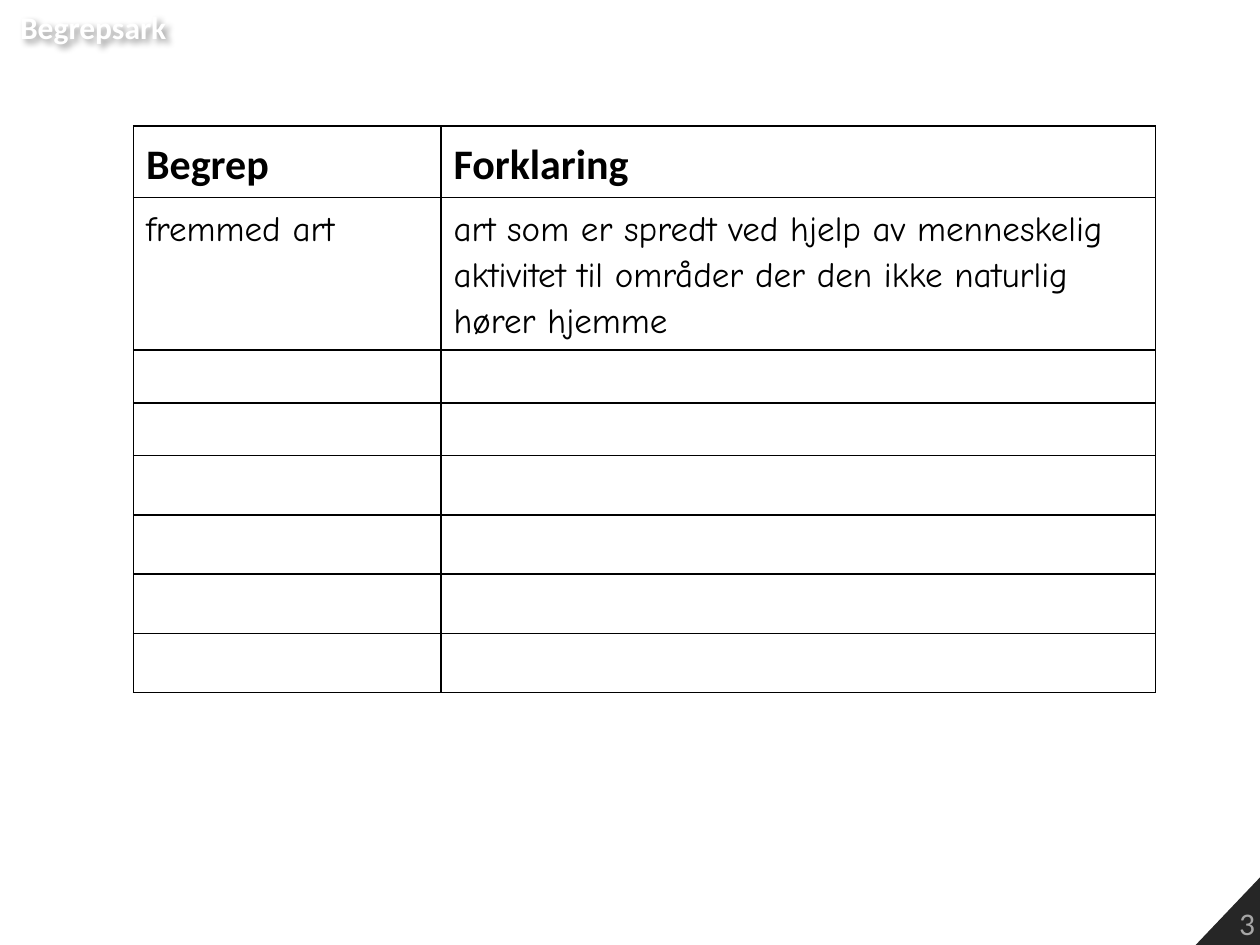
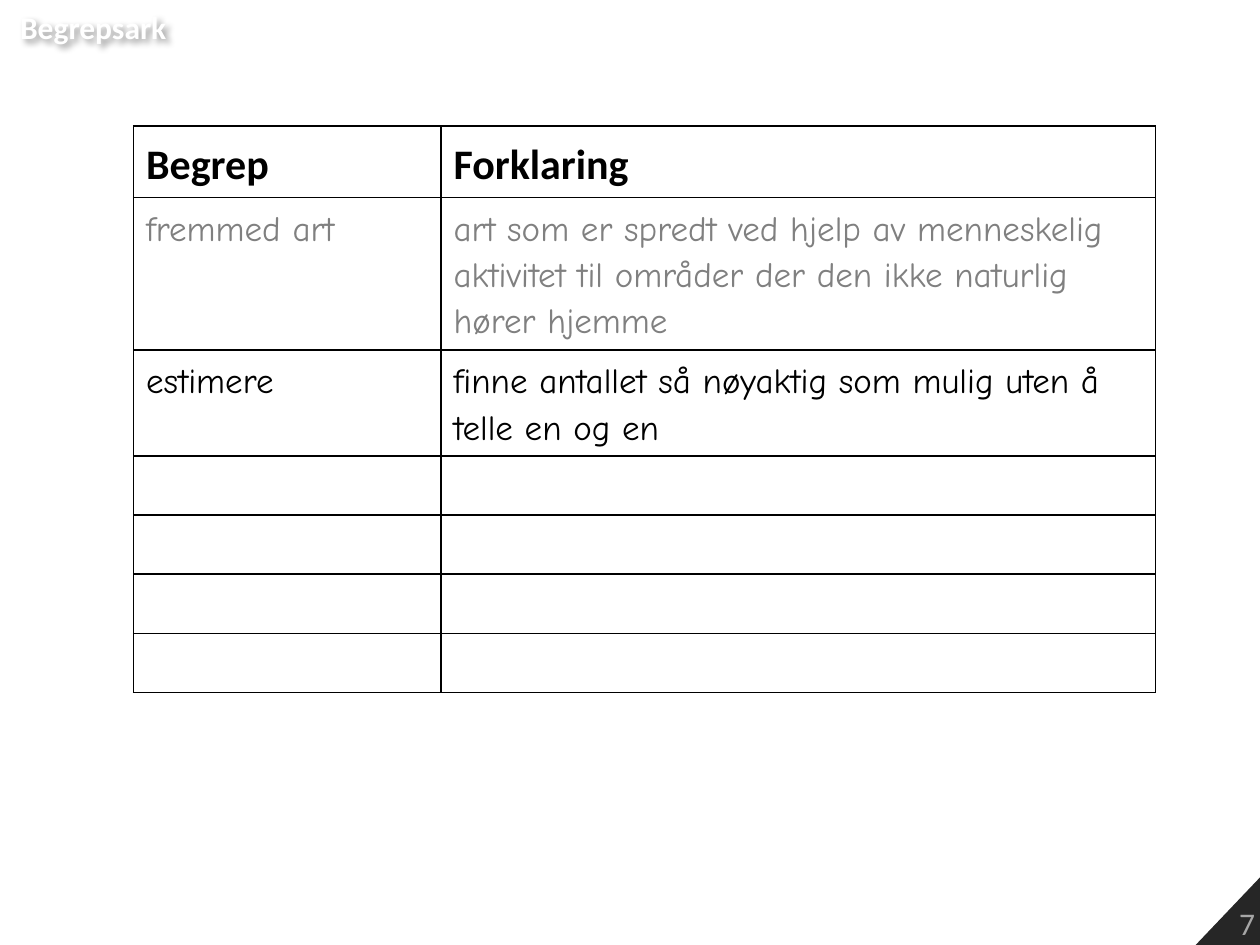
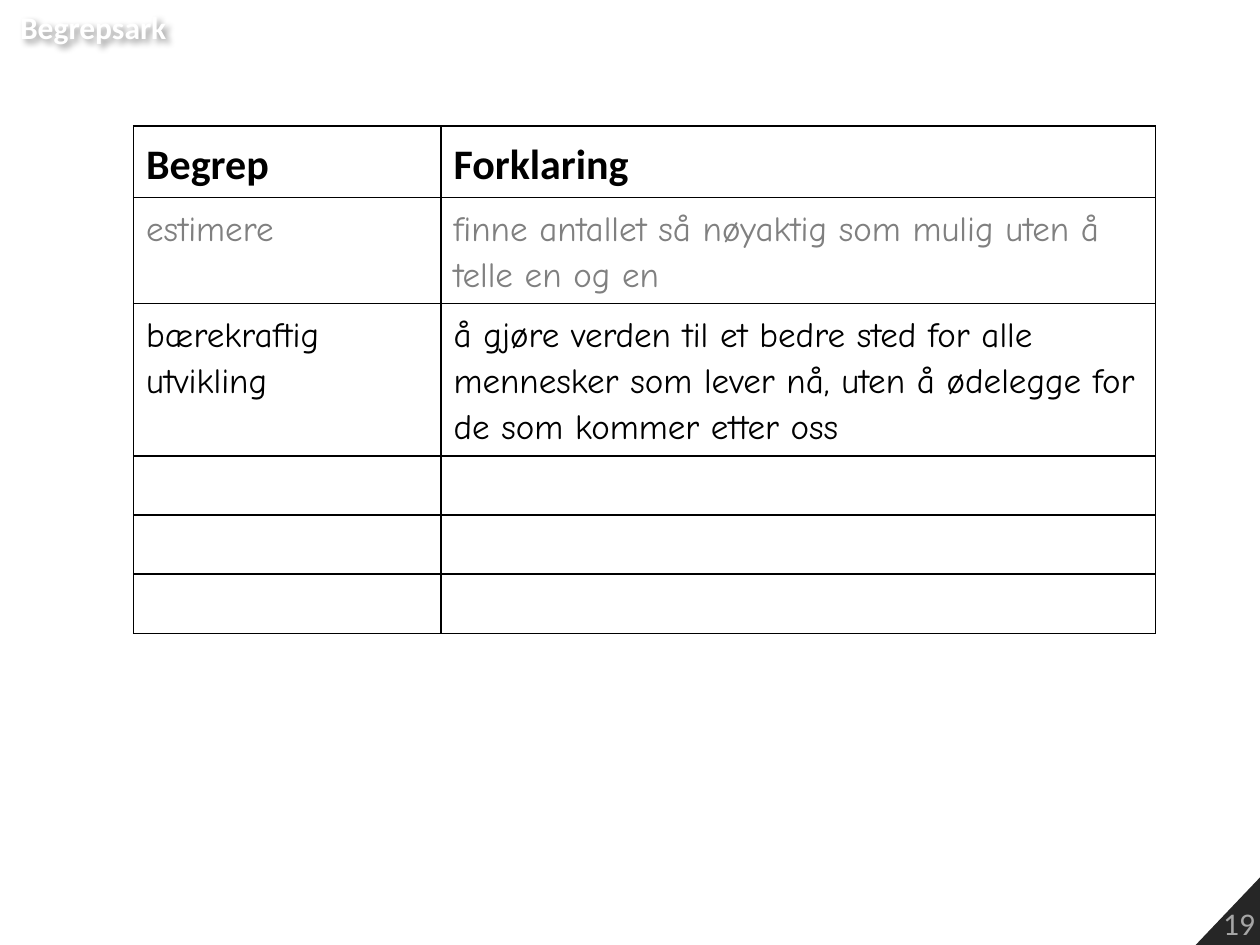
from lxml import etree
from pptx import Presentation
from pptx.dml.color import RGBColor
from pptx.enum.text import MSO_ANCHOR as Anchor, PP_ALIGN as Align
from pptx.oxml import parse_xml
from pptx.oxml.ns import nsdecls, qn
from pptx.util import Inches, Pt

BLACK = RGBColor(0x00, 0x00, 0x00)
WHITE = RGBColor(0xFF, 0xFF, 0xFF)
DARK = RGBColor(0x26, 0x26, 0x26)
GRAY = RGBColor(0x80, 0x80, 0x80)
SILVER = RGBColor(0xA6, 0xA6, 0xA6)

HEAD = dict(name="Calibri", size=Pt(24), bold=True)
BODY = dict(name="Comic Neue", size=Pt(20), bold=False)
TITLE = dict(name="Calibri", size=Pt(18), bold=True)
NUMBER = dict(name="Calibri", size=Pt(18), bold=False)

COLS = (2.44, 5.67)
HEAD_ROW = 0.56
LINE, PAD = 0.37, 0.1
BLANK = 0.47

ALIEN = ("fremmed art",
         "art som er spredt ved hjelp av menneskelig aktivitet til områder "
         "der den ikke naturlig hører hjemme", 3)
GUESS = ("estimere",
         "finne antallet så nøyaktig som mulig uten å telle en og en", 2)
GREEN = ("bærekraftig utvikling",
         "å gjøre verden til et bedre sted for alle mennesker som lever nå, "
         "uten å ødelegge for de som kommer etter oss", 3)

# Page number, old terms, new term, heights of the empty rows
PAGES = (
    (3, [], ALIEN, [0.42] * 2 + [BLANK] * 4),
    (7, [ALIEN], GUESS, [BLANK] * 4),
    (19, [GUESS], GREEN, [BLANK] * 3),
)


class Deck:
    def __init__(self):
        self.prs = Presentation()
        self.prs.slide_width = Inches(10)
        self.prs.slide_height = Inches(7.5)
        self.slide = None

    def page(self, number):
        self.slide = self.prs.slides.add_slide(self.prs.slide_layouts[5])
        self.corner(number)
        self.title("Begrepsark")

    def label(self, frame, text, style, color, align=Align.LEFT):
        para = frame.paragraphs[0]
        para.alignment = align
        run = para.add_run()
        run.text = text
        for key, value in style.items():
            setattr(run.font, key, value)
        run.font.color.rgb = color
        return para

    def title(self, text):
        box = self.slide.shapes.title
        box.left, box.top = Inches(0.06), Inches(0.01)
        box.width, box.height = Inches(1.37), Inches(0.4)
        box.text_frame.word_wrap = False
        box.text_frame.vertical_anchor = Anchor.TOP
        self.label(box.text_frame, text, TITLE, WHITE)
        box.element.spPr.append(parse_xml(
            f'<a:effectLst {nsdecls("a")}><a:outerShdw blurRad="50800" '
            'dist="38100" dir="2700000" algn="tl"><a:srgbClr val="000000">'
            '<a:alpha val="40000"/></a:srgbClr></a:outerShdw></a:effectLst>'))

    def corner(self, number):
        """Draw the dark page corner with its number."""
        pen = self.slide.shapes.build_freeform(
            Inches(9.47), Inches(7.52))
        pen.add_line_segments([(Inches(10.06), Inches(6.9)),
                               (Inches(10.06), Inches(7.52))])
        shape = pen.convert_to_shape()
        shape.shadow.inherit = False
        shape.fill.solid()
        shape.fill.fore_color.rgb = DARK
        shape.line.fill.background()
        shape.text_frame.vertical_anchor = Anchor.BOTTOM
        shape.text_frame.word_wrap = True
        self.label(shape.text_frame, str(number), NUMBER, SILVER, Align.RIGHT)

    def border(self, cell):
        props = cell._tc.get_or_add_tcPr()
        for spot, side in enumerate(("lnL", "lnR", "lnT", "lnB")):
            line = etree.Element(qn(f"a:{side}"), w=str(Pt(1)))
            fill = etree.SubElement(line, qn("a:solidFill"))
            etree.SubElement(fill, qn("a:srgbClr"), val=str(BLACK))
            props.insert(spot, line)

    def table(self, old, new, blanks):
        """Lay out the header, the greyed old terms, the new term and blanks."""
        rows = [(("Begrep", "Forklaring"), HEAD, BLACK, HEAD_ROW)]
        for term, color in [(t, GRAY) for t in old] + [(new, BLACK)]:
            rows.append((term[:2], BODY, color, term[2] * LINE + PAD))
        rows += [(("", ""), BODY, BLACK, high) for high in blanks]

        grid = self.slide.shapes.add_table(
            len(rows), len(COLS), Inches(1.06), Inches(1),
            Inches(sum(COLS)), Inches(sum(row[3] for row in rows))).table
        grid.first_row = grid.horz_banding = False
        for col, wide in zip(grid.columns, COLS):
            col.width = Inches(wide)
        for line, (texts, style, color, high) in zip(grid.rows, rows):
            line.height = Inches(high)
            for cell, text in zip(line.cells, texts):
                cell.fill.background()
                self.border(cell)
                if style is HEAD:
                    cell.vertical_anchor = Anchor.MIDDLE
                if text:
                    para = self.label(cell.text_frame, text, style, color)
                    para.line_spacing = 1.15


def main():
    deck = Deck()
    for number, old, new, blanks in PAGES:
        deck.page(number)
        deck.table(old, new, blanks)
    deck.prs.save("out.pptx")


if __name__ == "__main__":
    main()
